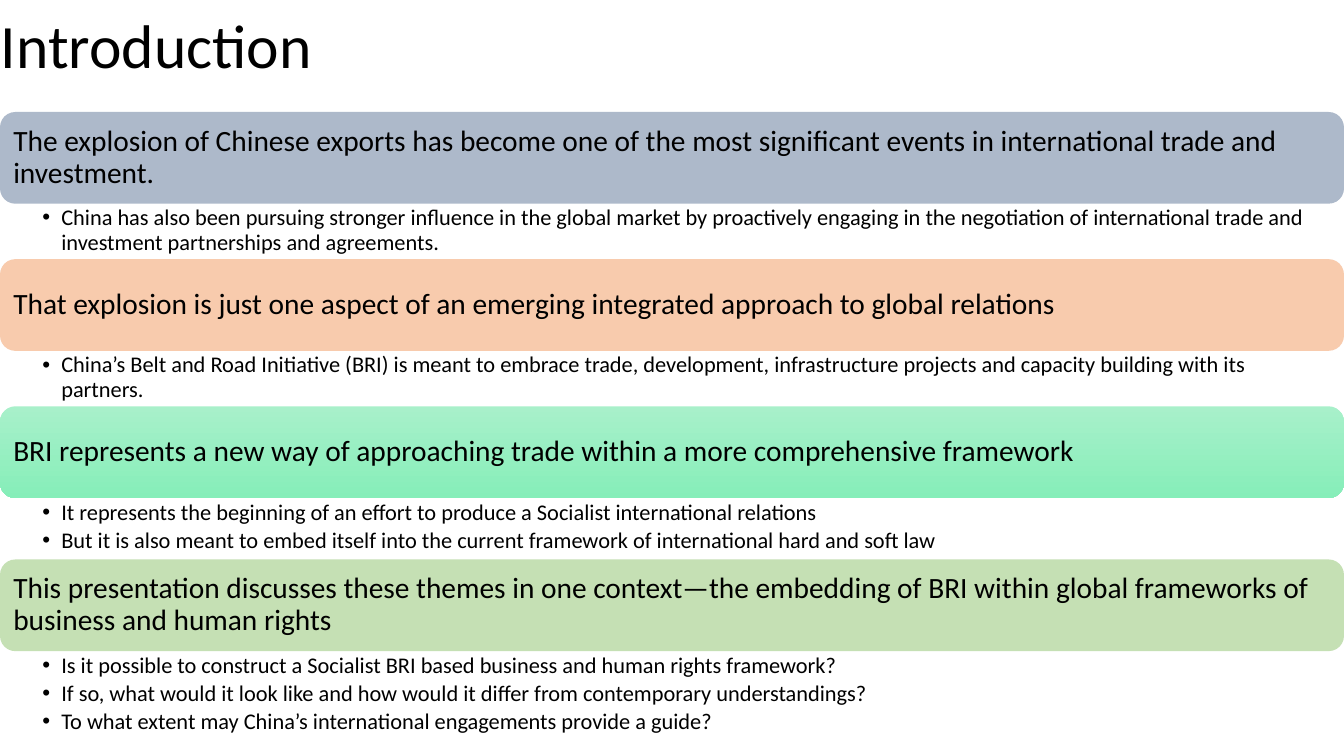
from lxml.etree import SubElement
from pptx import Presentation
from pptx.dml.color import RGBColor
from pptx.enum.shapes import MSO_SHAPE
from pptx.enum.text import MSO_ANCHOR, MSO_AUTO_SIZE, PP_ALIGN
from pptx.oxml.ns import qn
from pptx.util import Pt

TITLE = "Introduction"
# heading, bar colours (two make a gradient), list height, points
THEMES = [
    ("The explosion of Chinese exports has become one of the most significant "
     "events in international trade and investment.",
     ["ADB9CA"], 39.6,
     ["China has also been pursuing stronger influence in the global market by "
      "proactively engaging in the negotiation of international trade and "
      "investment partnerships and agreements."]),
    ("That explosion is just one aspect of an emerging integrated approach to "
     "global relations",
     ["F8CBAD"], 39.6,
     ["China’s Belt and Road Initiative (BRI) is meant to embrace trade, "
      "development, infrastructure projects and capacity building with its "
      "partners."]),
    ("BRI represents a new way of approaching trade within a more "
     "comprehensive framework",
     ["A8F0CA", "86EEB9"], 43.9,
     ["It represents the beginning of an effort to produce a Socialist "
      "international relations",
      "But it is also meant to embed itself into the current framework of "
      "international hard and soft law"]),
    ("This presentation discusses these themes in one context—the embedding of "
     "BRI within global frameworks of business and human rights",
     ["C5E0B4"], 64.8,
     ["Is it possible to construct a Socialist BRI based business and human "
      "rights framework?",
      "If so, what would it look like and how would it differ from "
      "contemporary understandings?",
      "To what extent may China’s international engagements provide a guide?"]),
]
WIDTH, HEIGHT = 960, 540
TOP, BAR = 80, 65.5
INDENT = 13.5


def color(code):
    return RGBColor.from_string(code)


def setup(frame, anchor, left, top, right, bottom):
    frame.word_wrap = True
    frame.auto_size = MSO_AUTO_SIZE.NONE
    frame.vertical_anchor = anchor
    frame.margin_left, frame.margin_top = Pt(left), Pt(top)
    frame.margin_right, frame.margin_bottom = Pt(right), Pt(bottom)


def write(para, text, size):
    para.alignment = PP_ALIGN.LEFT
    para.line_spacing = 0.9
    run = para.add_run()
    run.text = text
    run.font.name = "Calibri"
    run.font.size = Pt(size)
    run.font.color.rgb = color("000000")


def bullet(para):
    props = para._p.get_or_add_pPr()
    props.set("marL", str(Pt(INDENT)))
    props.set("indent", str(-Pt(INDENT)))
    SubElement(props, qn("a:buFont")).set("typeface", "Arial")
    SubElement(props, qn("a:buChar")).set("char", "•")


def add_bar(slide, top, text, codes):
    bar = slide.shapes.add_shape(
        MSO_SHAPE.ROUNDED_RECTANGLE, 0, Pt(top), Pt(WIDTH), Pt(BAR))
    bar.shadow.inherit = False
    bar.line.fill.background()
    if len(codes) == 1:
        bar.fill.solid()
        bar.fill.fore_color.rgb = color(codes[0])
    else:
        bar.fill.gradient()
        bar.fill.gradient_angle = 270
        for spot, (stop, code) in enumerate(zip(bar.fill.gradient_stops, codes)):
            stop.position = spot
            stop.color.rgb = color(code)
    setup(bar.text_frame, MSO_ANCHOR.MIDDLE, 6.3, 6.3, 6.3, 6.3)
    write(bar.text_frame.paragraphs[0], text, 21)


def add_list(slide, top, height, points):
    box = slide.shapes.add_textbox(0, Pt(top), Pt(WIDTH), Pt(height))
    frame = box.text_frame
    setup(frame, MSO_ANCHOR.TOP, 30.3, 2, 11.4, 2)
    for index, point in enumerate(points):
        para = frame.add_paragraph() if index else frame.paragraphs[0]
        bullet(para)
        para.level = 1
        para.space_after = Pt(2.8)
        write(para, point, 16)


def main():
    deck = Presentation()
    deck.slide_width, deck.slide_height = Pt(WIDTH), Pt(HEIGHT)
    slide = deck.slides.add_slide(deck.slide_layouts[5])

    title = slide.shapes.title
    title.left, title.top = Pt(-6.5), Pt(0)
    title.width, title.height = Pt(268.5), Pt(70)
    setup(title.text_frame, MSO_ANCHOR.MIDDLE, 7.2, 3.6, 7.2, 3.6)
    write(title.text_frame.paragraphs[0], TITLE, 44)

    top = TOP
    for text, codes, height, points in THEMES:
        add_bar(slide, top, text, codes)
        add_list(slide, top + BAR, height, points)
        top += BAR + height
    deck.save("out.pptx")


if __name__ == "__main__":
    main()
